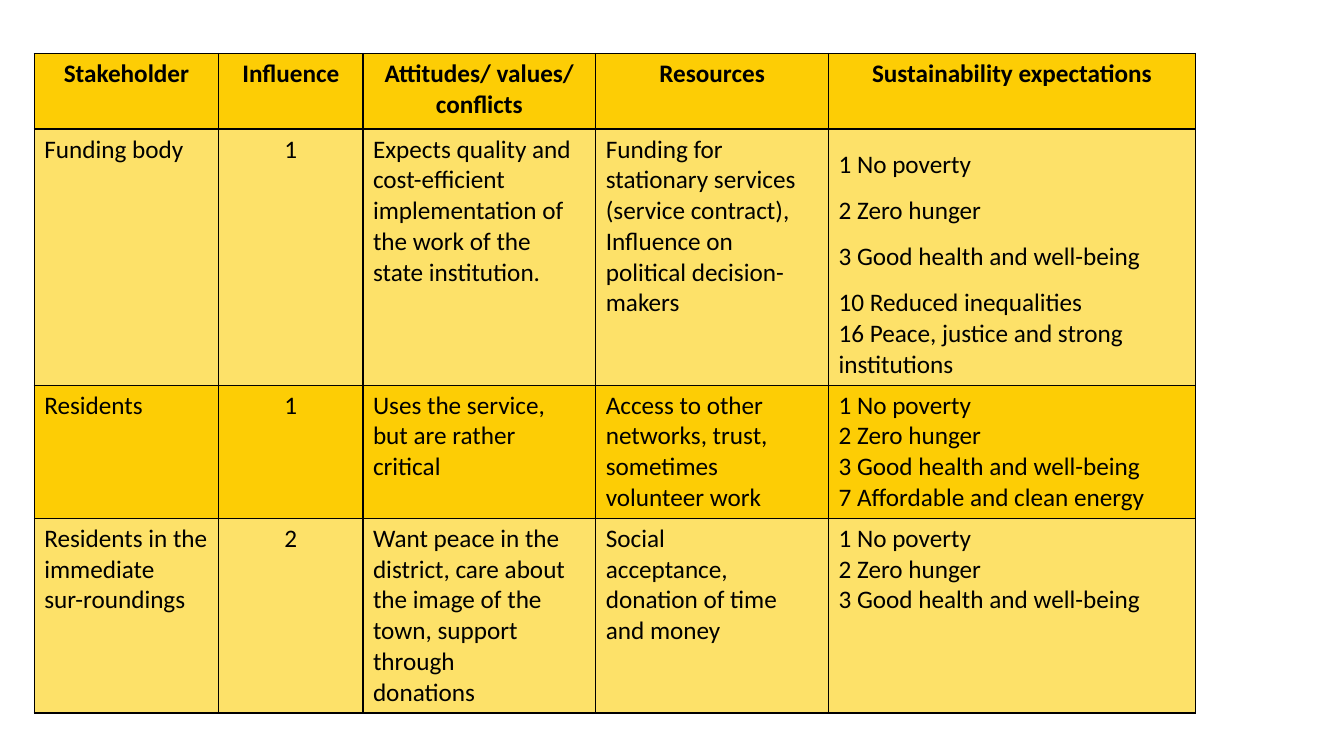
import lxml.etree
import pptx
import pptx.dml.color
import pptx.enum.text
import pptx.oxml.ns
import pptx.util

COLORS = {"gold": "FDCD05", "black": "000000"}
COLUMN_WIDTHS = [131.8, 103, 166.3, 166.3, 262.1]
ROW_HEIGHTS = [54, 176, 95, 139]
INFLUENCE_COLUMN = 1
TAB_STOP = 67

NO_POVERTY, ZERO_HUNGER, GOOD_HEALTH = SHARED_GOALS = [
    "1 No poverty", "2 Zero hunger", "3 Good health and well-being"]
SPACED_GOALS = SHARED_GOALS + ["10 Reduced inequalities"]

# Each cell is a list of paragraphs
STAKEHOLDER_ROWS = [
    [["Stakeholder"], ["Influence"], ["Attitudes/ values/ conflicts"],
     ["Resources"], ["Sustainability expectations"]],
    [["Funding body"], ["1"],
     ["Expects quality and cost-efficient implementation of the work of the state institution."],
     ["Funding for stationary services (service contract),",
      "Influence on political decision-makers"],
     SPACED_GOALS + ["16 Peace, justice and strong institutions"]],
    [["Residents"], ["1"], ["Uses the service, but are rather critical"],
     ["Access to other networks, trust, sometimes", "volunteer work"],
     SHARED_GOALS + ["7 Affordable and clean energy"]],
    [["Residents in the immediate", "sur-roundings"], ["2"],
     ["Want peace in the district, care about the image of the town, support through",
      "donations"],
     ["Social", "acceptance,", "donation of time and money"],
     SHARED_GOALS],
]


def add_element(parent, tag, **attributes):
    return lxml.etree.SubElement(parent, pptx.oxml.ns.qn(tag), attributes)


class TableSlide:
    """Holds the text style and the current slide."""

    def __init__(self, presentation):
        self.slide = presentation.slides.add_slide(presentation.slide_layouts[6])
        self.font_format = {"name": "Calibri", "size": pptx.util.Pt(18)}

    def add_table(self, left, top, widths, heights):
        frame = self.slide.shapes.add_table(
            len(heights), len(widths), pptx.util.Pt(left), pptx.util.Pt(top),
            pptx.util.Pt(sum(widths)), pptx.util.Pt(sum(heights)))
        table = frame.table
        table.horz_banding = False
        for column, width in zip(table.columns, widths):
            column.width = pptx.util.Pt(width)
        for row, height in zip(table.rows, heights):
            row.height = pptx.util.Pt(height)
        return table

    def add_borders(self, cell, top, bottom):
        properties = cell._tc.get_or_add_tcPr()
        sides = {"a:lnL": 1, "a:lnR": 1, "a:lnT": top, "a:lnB": bottom}
        for tag, width in sides.items():
            line = add_element(properties, tag, w=str(pptx.util.Pt(width)))
            fill = add_element(line, "a:solidFill")
            add_element(fill, "a:srgbClr", val=COLORS["black"])

    def fill_cell(self, cell, opacity):
        cell.fill.solid()
        cell.fill.fore_color.rgb = pptx.dml.color.RGBColor.from_string(COLORS["gold"])
        if opacity < 100:
            for color in cell._tc.tcPr.findall("a:solidFill/a:srgbClr", pptx.oxml.ns._nsmap):
                add_element(color, "a:alpha", val=str(opacity * 1000))

    def write_cell(self, cell, lines, bold, centered, spaced_lines=()):
        text_frame = cell.text_frame
        for index, line in enumerate(lines):
            paragraph = text_frame.add_paragraph() if index else text_frame.paragraphs[0]
            if line in spaced_lines:
                tabs = add_element(paragraph._p.get_or_add_pPr(), "a:tabLst")
                add_element(tabs, "a:tab", pos=str(pptx.util.Pt(TAB_STOP)), algn="l")
                paragraph.line_spacing = 1.5
            if centered:
                paragraph.alignment = pptx.enum.text.PP_ALIGN.CENTER
            run = paragraph.add_run()
            run.text = line
            for name, value in {**self.font_format, "bold": bold}.items():
                setattr(run.font, name, value)
            run.font.color.rgb = pptx.dml.color.RGBColor.from_string(COLORS["black"])


def main():
    presentation = pptx.Presentation()
    presentation.slide_width = pptx.util.Pt(960)
    presentation.slide_height = pptx.util.Pt(540)
    page = TableSlide(presentation)

    # Stakeholder table: header, then light and full gold rows in turn
    table = page.add_table(24.5, 38.2, COLUMN_WIDTHS, ROW_HEIGHTS)
    for row_index, row in enumerate(STAKEHOLDER_ROWS):
        header = row_index == 0
        for column_index, lines in enumerate(row):
            cell = table.cell(row_index, column_index)
            page.add_borders(cell, top=2 if row_index == 1 else 1, bottom=2 if header else 1)
            page.fill_cell(cell, opacity=60 if row_index % 2 else 100)
            page.write_cell(cell, lines, bold=header,
                            centered=header or column_index == INFLUENCE_COLUMN,
                            spaced_lines=SPACED_GOALS if row_index == 1 else ())

    presentation.save("out.pptx")


if __name__ == "__main__":
    main()
